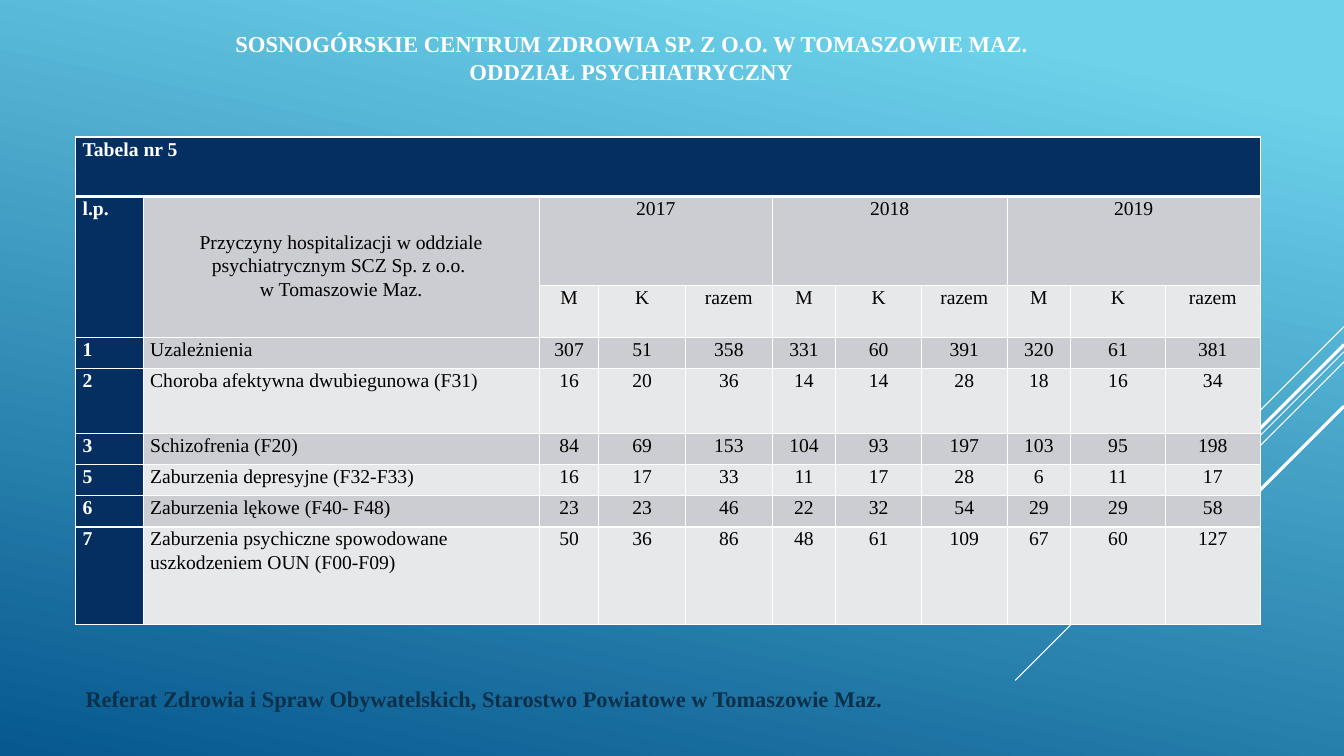
from dataclasses import dataclass

from lxml.etree import SubElement
from pptx import Presentation
from pptx.dml.color import RGBColor
from pptx.enum.shapes import MSO_CONNECTOR
from pptx.enum.text import MSO_ANCHOR, MSO_AUTO_SIZE, PP_ALIGN
from pptx.oxml.ns import qn
from pptx.slide import Slide
from pptx.table import Table, _Cell
from pptx.text.text import _Paragraph
from pptx.util import Inches, Pt

COLORS = {
    "sky": "6ED2EB",
    "sea": "06588E",
    "navy": "052F61",
    "dark_band": "CCCDD2",
    "light_band": "E7E8EA",
    "white": "FFFFFF",
    "black": "000000",
    "footer": "0A304A",
}
FONT = "Times New Roman"
COLUMN_WIDTHS = [0.67, 3.93, 0.59, 0.86, 0.86, 0.63, 0.85, 0.85, 0.63, 0.94, 0.94]
ROW_HEIGHTS = [0.59, 0.88, 0.52, 0.31, 0.64, 0.31, 0.31, 0.31, 0.97]
YEARS = ["2017", "2018", "2019"]
GROUPS = ["M", "K", "razem"]
CAUSES_HEADING = (
    "Przyczyny hospitalizacji w oddziale psychiatrycznym SCZ Sp. z o.o. \n"
    "w Tomaszowie Maz."
)


@dataclass
class Diagonal:
    """A 45-degree line falling leftwards from the right edge of the slide."""
    top: float
    run: float
    weight: float


@dataclass
class Diagnosis:
    number: str
    name: str
    counts: list[int]


DIAGONALS = [
    Diagonal(3.24, 1.0, 0.75),
    Diagonal(3.49, 3.26, 0.75),
    Diagonal(3.59, 2.07, 0.75),
    Diagonal(3.42, 1.91, 2.25),
    Diagonal(4.03, 1.39, 2.25),
]
DIAGNOSES = [
    Diagnosis("1", "Uzależnienia", [307, 51, 358, 331, 60, 391, 320, 61, 381]),
    Diagnosis("2", "Choroba afektywna dwubiegunowa (F31)",
              [16, 20, 36, 14, 14, 28, 18, 16, 34]),
    Diagnosis("3", "Schizofrenia (F20)", [84, 69, 153, 104, 93, 197, 103, 95, 198]),
    Diagnosis("5", "Zaburzenia depresyjne (F32-F33)",
              [16, 17, 33, 11, 17, 28, 6, 11, 17]),
    Diagnosis("6", "Zaburzenia lękowe (F40- F48)",
              [23, 23, 46, 22, 32, 54, 29, 29, 58]),
    Diagnosis("7", "Zaburzenia psychiczne spowodowane uszkodzeniem OUN (F00-F09)",
              [50, 36, 86, 48, 61, 109, 67, 60, 127]),
]


def rgb(name: str) -> RGBColor:
    return RGBColor.from_string(COLORS[name])


def set_font(paragraph: _Paragraph, size: float, color: str, bold: bool) -> None:
    font = paragraph.font
    font.name, font.size, font.bold = FONT, Pt(size), bold
    font.color.rgb = rgb(color)


def paint_background(page: Slide) -> None:
    fill = page.background.fill
    fill.gradient()
    fill.gradient_angle = 258
    for stop, color, position in zip(fill.gradient_stops, ("sky", "sea"), (0.1, 1.0)):
        stop.color.rgb = rgb(color)
        stop.position = position


def draw_diagonal(page: Slide, diagonal: Diagonal) -> None:
    right = 13.33
    line = page.shapes.add_connector(
        MSO_CONNECTOR.STRAIGHT,
        Inches(right), Inches(diagonal.top),
        Inches(right - diagonal.run), Inches(diagonal.top + diagonal.run),
    )
    line.line.color.rgb = rgb("white")
    line.line.width = Pt(diagonal.weight)
    SubElement(line._element.spPr, qn("a:effectLst"))


def write_title(page: Slide) -> None:
    title = page.shapes.title
    title.left, title.top = Inches(1.25), Inches(0.28)
    title.width, title.height = Inches(10.02), Inches(1.08)
    frame = title.text_frame
    frame.auto_size = MSO_AUTO_SIZE.NONE
    frame.vertical_anchor = MSO_ANCHOR.TOP
    frame.margin_top = Inches(0.02)
    paragraph = frame.paragraphs[0]
    paragraph.text = ("SOSNOGÓRSKIE CENTRUM ZDROWIA SP. Z O.O. W TOMASZOWIE MAZ.\n"
                      "ODDZIAŁ PSYCHIATRYCZNY")
    paragraph.alignment = PP_ALIGN.CENTER
    set_font(paragraph, 16.2, "white", True)


def write_footer(page: Slide) -> None:
    box = page.shapes.add_textbox(Inches(0.75), Inches(6.75), Inches(8.25), Inches(0.4))
    box.text_frame.word_wrap = True
    paragraph = box.text_frame.paragraphs[0]
    paragraph.text = ("Referat Zdrowia i Spraw Obywatelskich, "
                      "Starostwo Powiatowe w Tomaszowie Maz.")
    set_font(paragraph, 16, "footer", True)


def draw_borders(cell: _Cell, top: float, bottom: float) -> None:
    properties = cell._tc.get_or_add_tcPr()
    for side, weight in (("L", 1), ("R", 1), ("T", top), ("B", bottom)):
        line = SubElement(properties, qn(f"a:ln{side}"), w=str(Pt(weight)))
        fill = SubElement(line, qn("a:solidFill"))
        SubElement(fill, qn("a:srgbClr"), val=COLORS["white"])


def format_cell(cell: _Cell, row: int, column: int) -> None:
    is_navy = row == 0 or column == 0
    is_dark = row == 1 or (row == 2 and column == 1) or (row > 2 and row % 2 == 1)
    draw_borders(cell, 3 if row == 1 else 1, 3 if row == 0 else 1)
    cell.fill.solid()
    band = "dark_band" if is_dark else "light_band"
    cell.fill.fore_color.rgb = rgb("navy" if is_navy else band)
    cell.margin_left = cell.margin_right = Inches(0.07)
    cell.margin_top = cell.margin_bottom = 0
    paragraph = cell.text_frame.paragraphs[0]
    paragraph.line_spacing = 1.07
    paragraph.space_after = Pt(8)
    centred = not is_navy and (column > 1 or row < 3)
    paragraph.alignment = PP_ALIGN.CENTER if centred else PP_ALIGN.LEFT
    set_font(paragraph, 14, "white" if is_navy else "black", is_navy)


def fill_table(table: Table) -> None:
    rows = [
        ["Tabela nr 5"],
        ["l.p.", CAUSES_HEADING] + [text for year in YEARS for text in (year, "", "")],
        ["", ""] + GROUPS * len(YEARS),
    ]
    rows += [[item.number, item.name, *map(str, item.counts)] for item in DIAGNOSES]
    for row, texts in enumerate(rows):
        for column, text in enumerate(texts):
            table.cell(row, column).text_frame.paragraphs[0].text = text


def merge_headings(table: Table) -> None:
    table.cell(0, 0).merge(table.cell(0, len(COLUMN_WIDTHS) - 1))
    for column in range(2):
        table.cell(1, column).merge(table.cell(2, column))
    for first in range(2, len(COLUMN_WIDTHS), len(GROUPS)):
        table.cell(1, first).merge(table.cell(1, first + len(GROUPS) - 1))


def add_hospitalization_table(page: Slide) -> None:
    table = page.shapes.add_table(
        len(ROW_HEIGHTS), len(COLUMN_WIDTHS),
        Inches(0.75), Inches(1.36), Inches(11.75), Inches(4.86),
    ).table
    table.horz_banding = table.first_row = False
    for column, width in zip(table.columns, COLUMN_WIDTHS):
        column.width = Inches(width)
    for row, height in zip(table.rows, ROW_HEIGHTS):
        row.height = Inches(height)
    fill_table(table)
    for row in range(len(ROW_HEIGHTS)):
        for column in range(len(COLUMN_WIDTHS)):
            format_cell(table.cell(row, column), row, column)
    merge_headings(table)
    table.cell(1, 1).margin_top = Inches(0.34)


def main() -> None:
    deck = Presentation()
    deck.slide_width, deck.slide_height = Inches(13.33), Inches(7.5)
    page = deck.slides.add_slide(deck.slide_layouts[5])
    paint_background(page)
    for diagonal in DIAGONALS:
        draw_diagonal(page, diagonal)
    write_title(page)
    write_footer(page)
    add_hospitalization_table(page)
    deck.save("out.pptx")


if __name__ == "__main__":
    main()
